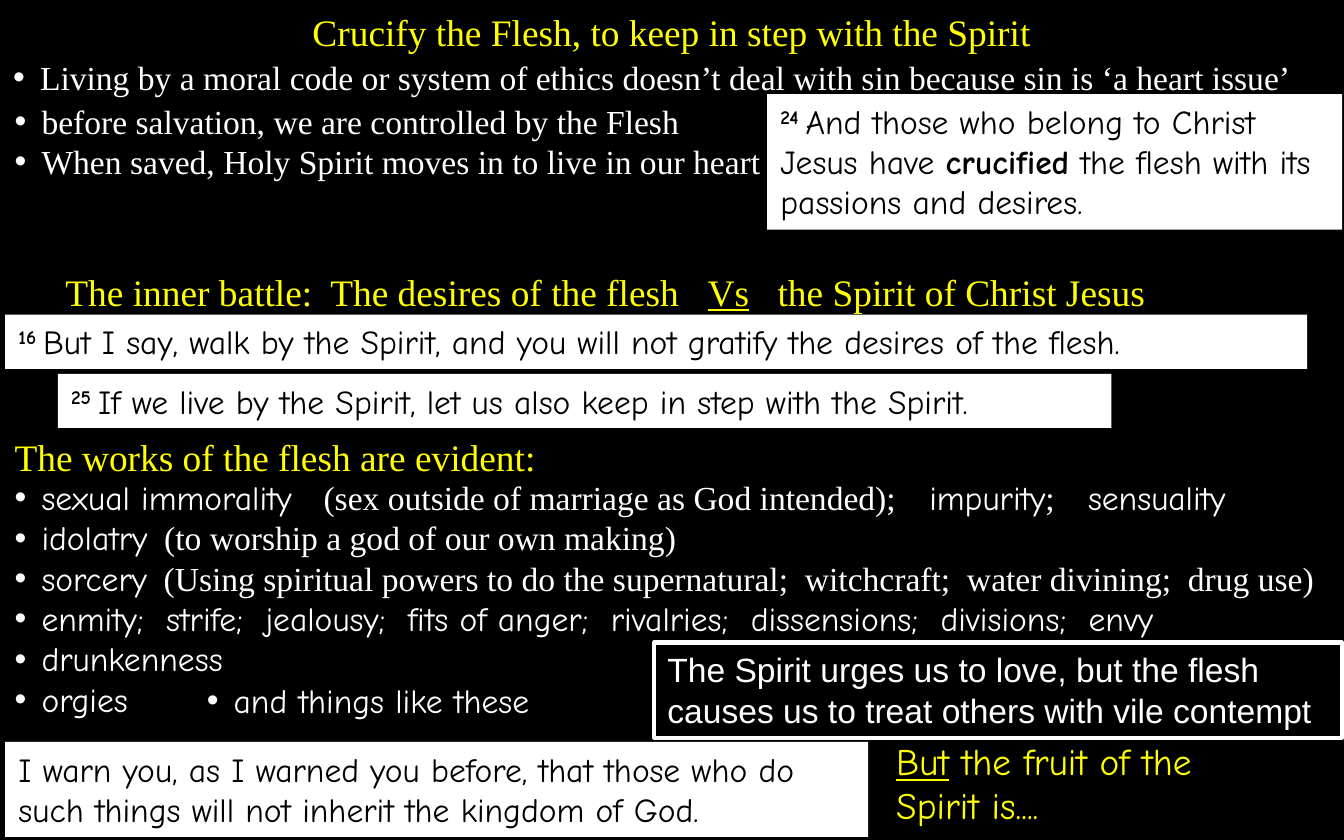
from lxml.etree import SubElement
from pptx import Presentation
from pptx.dml.color import RGBColor
from pptx.enum.shapes import MSO_SHAPE
from pptx.enum.text import MSO_ANCHOR, MSO_AUTO_SIZE, PP_ALIGN
from pptx.oxml.ns import qn
from pptx.util import Pt

COLOURS = {"black": "000000", "white": "FFFFFF", "yellow": "FFFF00"}
SERIF, HAND, SANS = "Times New Roman", "Comic Neue", "Arial"
FRAME = {
    "word_wrap": True,
    "auto_size": MSO_AUTO_SIZE.SHAPE_TO_FIT_TEXT,
    "vertical_anchor": MSO_ANCHOR.TOP,
}
TITLE = {"name": SERIF, "size": Pt(20), "color": "yellow"}
POINT = {"name": SERIF, "size": Pt(18), "color": "white"}
VICE = {**POINT, "name": HAND}
VERSE = {**VICE, "color": "black"}
FRUIT = {**TITLE, "name": HAND}
NOTE = {**POINT, "name": SANS}
PLAIN = {"name": SERIF}
BOLD = {"bold": True}
LINED = {"underline": True}
RAISED = {"bold": True, "baseline": 30000}
INDENT = 14.4


def colour(name):
    return RGBColor.from_string(COLOURS[name])


class Page:
    def __init__(self, deck):
        self.slide = deck.slides.add_slide(deck.slide_layouts[6])
        fill = self.slide.background.fill
        fill.solid()
        fill.fore_color.rgb = colour("black")

    def set_text(self, shape, lines, style, bullet=False, align=PP_ALIGN.LEFT, tabs=()):
        """Each line is a list of runs: a string, or a string with style changes."""
        frame = shape.text_frame
        for key, value in FRAME.items():
            setattr(frame, key, value)
        for i, line in enumerate(lines):
            para = frame.add_paragraph() if i else frame.paragraphs[0]
            para.alignment = align
            props = para._p.get_or_add_pPr()
            if bullet:
                props.set("marL", str(Pt(INDENT)))
                props.set("indent", str(Pt(-INDENT)))
                SubElement(props, qn("a:buFont"), typeface="Arial")
                SubElement(props, qn("a:buChar"), char="•")
            if tabs and i == 0:
                stops = SubElement(props, qn("a:tabLst"))
                for stop in tabs:
                    SubElement(stops, qn("a:tab"), pos=str(Pt(stop)), algn="l")
            for part in line:
                text, extra = (part, {}) if isinstance(part, str) else part
                self.add_run(para, text, {**style, **extra})

    def add_run(self, para, text, look):
        run = para.add_run()
        run.text = text
        for key, value in look.items():
            if key == "color":
                run.font.color.rgb = colour(value)
            elif key == "baseline":
                run._r.get_or_add_rPr().set(key, str(value))
            else:
                setattr(run.font, key, value)

    def text(self, box, lines, style, **layout):
        shape = self.slide.shapes.add_textbox(*map(Pt, box))
        self.set_text(shape, lines, style, **layout)

    def panel(self, box, runs, style, fill=None, line=None):
        shape = self.slide.shapes.add_shape(MSO_SHAPE.RECTANGLE, *map(Pt, box))
        shape.shadow.inherit = False
        if fill:
            shape.fill.solid()
            shape.fill.fore_color.rgb = colour(fill)
        else:
            shape.fill.background()
        if line:
            shape.line.color.rgb = colour(line)
            shape.line.width = Pt(2.25)
        else:
            shape.line.fill.background()
        self.set_text(shape, [runs], style)

    def verse(self, box, runs):
        self.panel(box, runs, VERSE, fill="white")


def main():
    deck = Presentation()
    deck.slide_width, deck.slide_height = Pt(720), Pt(450)
    page = Page(deck)

    page.text((0, 1.5, 720, 31.5), [["Crucify the Flesh, to keep in step with the Spirit"]],
              TITLE, align=PP_ALIGN.CENTER)
    page.text((0, 26.8, 720, 29), [[
        "Living by a moral code or system of ethics doesn’t deal with sin "
        "because sin is ‘a heart issue’"]], POINT, bullet=True)
    page.text((0.8, 50.4, 720, 51), [
        ["before salvation, we are controlled by the Flesh"],
        ["When saved, Holy Spirit moves in to live in our heart"],
    ], POINT, bullet=True)
    page.verse((411, 50.4, 308, 72.7), [
        ("24 ", RAISED), "And those who belong to Christ Jesus have ",
        ("crucified", BOLD), " the flesh with its passions and desires."])

    page.text((28, 140.5, 632, 31.5), [[
        "The inner battle:  The desires of the flesh\t", ("Vs", LINED),
        "\tthe Spirit of Christ Jesus"]], TITLE, tabs=(344, 381.5))
    page.verse((2.8, 168.6, 697.5, 29), [
        ("16 ", RAISED),
        "But I say, walk by the Spirit, and you will not gratify the desires of the flesh."])
    page.verse((31, 200.3, 564.5, 29), [
        ("25 ", RAISED),
        "If we live by the Spirit, let us also keep in step with the Spirit."])

    page.text((0.8, 228.8, 308, 31.5), [["The works of the flesh are evident:"]], TITLE)
    page.text((0.8, 252, 720, 138), [
        ["sexual immorality\t", ("(sex outside of marriage as God intended);\t", PLAIN),
         "impurity", (";\t", PLAIN), "sensuality"],
        ["idolatry", ("  (to worship a god of our own making)", PLAIN)],
        ["sorcery", ("  (Using spiritual powers to do the supernatural;  witchcraft;  "
                     "water divining;  drug use)", PLAIN)],
        ["enmity;  strife;  jealousy;  fits of anger;  rivalries;  dissensions;  "
         "divisions;  envy"],
        ["drunkenness"],
        ["orgies"],
    ], VICE, bullet=True, tabs=(165.5, 490, 575))
    page.text((103.7, 360.7, 209.5, 29), [["and things like these"]], VICE, bullet=True)

    page.panel((350.5, 344.2, 368.5, 51), [
        "The Spirit urges us to love, but the flesh causes us to treat others "
        "with vile contempt"], NOTE, line="white")
    page.verse((2.8, 397.4, 462.3, 51), [
        "I warn you, as I warned you before, that those who do such things will "
        "not inherit the kingdom of God."])
    page.text((473, 391.7, 193.7, 55.4), [
        [("But", LINED), " the fruit of the Spirit is...."]], FRUIT)

    deck.save("out.pptx")


if __name__ == "__main__":
    main()
